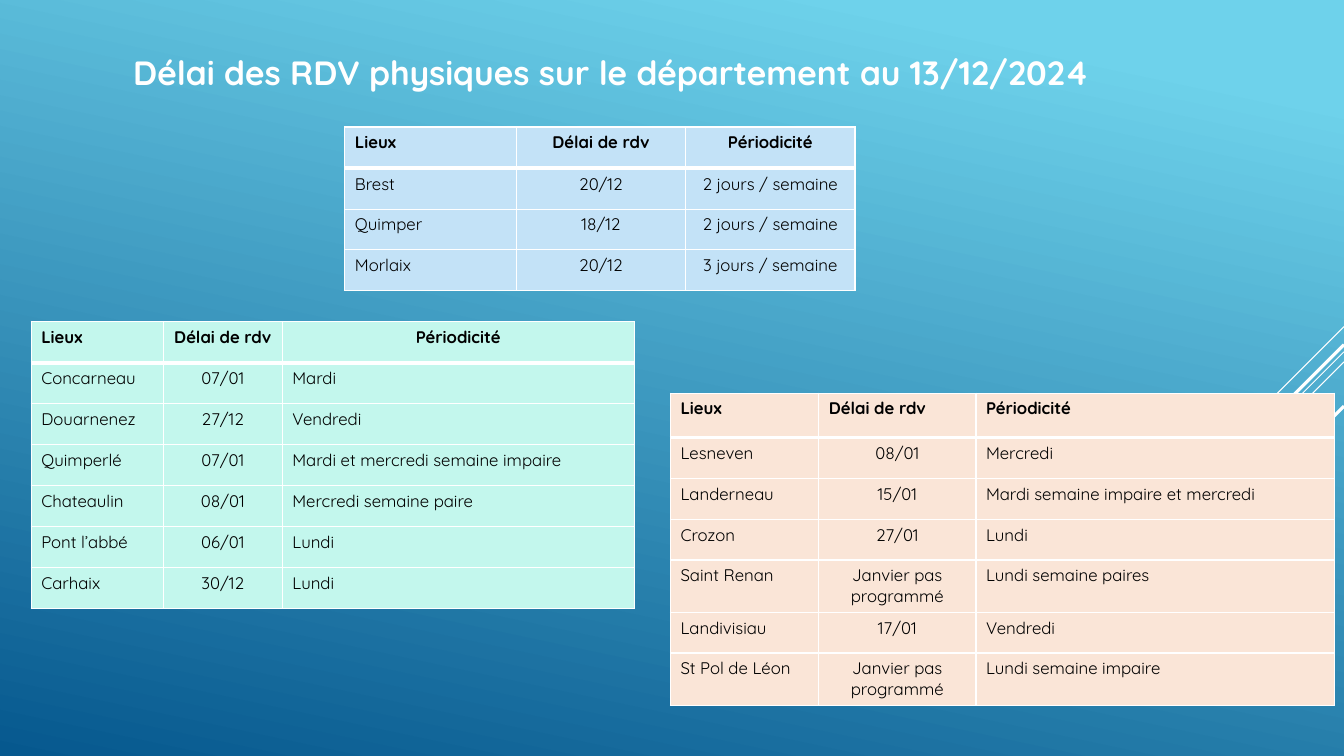
from dataclasses import dataclass

from lxml import etree
from pptx import Presentation
from pptx.dml.color import RGBColor
from pptx.enum.shapes import MSO_CONNECTOR
from pptx.enum.text import MSO_ANCHOR, PP_ALIGN
from pptx.oxml.ns import qn
from pptx.util import Inches, Pt

STRAIGHT = MSO_CONNECTOR.STRAIGHT
MIDDLE = MSO_ANCHOR.MIDDLE
LEFT, CENTER = PP_ALIGN.LEFT, PP_ALIGN.CENTER


@dataclass(frozen=True)
class Theme:
    font: str = "Quicksand"
    title_size: int = 24
    table_size: int = 12
    white: str = "FFFFFF"
    black: str = "000000"
    sky: str = "6ED2EB"
    ocean: str = "06588E"
    blue: str = "C3E2F7"
    mint: str = "C3F7ED"
    peach: str = "FAE5D7"


THEME = Theme()


def add_text(para, text, size, color, bold, align):
    para.alignment = align
    span = para.add_run()
    span.text = text
    span.font.name = THEME.font
    span.font.size = Pt(size)
    span.font.bold = bold
    span.font.color.rgb = RGBColor.from_string(color)


def set_borders(cell, top, bottom):
    properties = cell._tc.get_or_add_tcPr()
    widths = {"a:lnL": 1, "a:lnR": 1, "a:lnT": top, "a:lnB": bottom}
    for position, (side, width) in enumerate(widths.items()):
        border = etree.Element(qn(side), w=str(Pt(width)))
        fill = etree.SubElement(border, qn("a:solidFill"))
        etree.SubElement(fill, qn("a:srgbClr"), val=THEME.white)
        properties.insert(position, border)


# Page and background gradient
deck = Presentation()
deck.slide_width = Inches(13.33)
deck.slide_height = Inches(7.5)
page = deck.slides.add_slide(deck.slide_layouts[5])
background = page.background.fill
background.gradient()
background.gradient_angle = 360 - 102
stops = [(0.1, THEME.sky), (1, THEME.ocean)]
for stop, (position, color) in zip(background.gradient_stops, stops):
    stop.position = position
    stop.color.rgb = RGBColor.from_string(color)

# Diagonal lines from the right edge: top, reach at 45 degrees, weight
diagonals = [(3.24, 1, 0.75), (3.49, 3.26, 0.75), (3.59, 2.07, 0.75),
             (3.42, 1.91, 2.25), (4.03, 1.39, 2.25)]
for top, reach, weight in diagonals:
    diagonal = page.shapes.add_connector(
        STRAIGHT, deck.slide_width, Inches(top),
        deck.slide_width - Inches(reach), Inches(top + reach))
    diagonal.line.color.rgb = RGBColor.from_string(THEME.white)
    diagonal.line.width = Pt(weight)
    etree.SubElement(diagonal._element.spPr, qn("a:effectLst"))

# Title
title = page.shapes.title
title.left, title.top = Inches(1.22), Inches(0.46)
title.width, title.height = Inches(10.61), Inches(0.5)
title.text_frame.word_wrap = True
title.text_frame.vertical_anchor = MIDDLE
add_text(title.text_frame.paragraphs[0],
         "Délai des RDV physiques sur le département au 13/12/2024",
         THEME.title_size, THEME.white, True, LEFT)

# Table contents
header = ("Lieux", "Délai de rdv", "Périodicité")
main_towns = [
    ("Brest", "20/12", "2 jours / semaine"),
    ("Quimper", "18/12", "2 jours / semaine"),
    ("Morlaix", "20/12", "3 jours / semaine"),
]
south_towns = [
    ("Concarneau", "07/01", "Mardi"),
    ("Douarnenez", "27/12", "Vendredi"),
    ("Quimperlé", "07/01", "Mardi et mercredi semaine impaire"),
    ("Chateaulin", "08/01", "Mercredi semaine paire"),
    ("Pont l’abbé", "06/01", "Lundi"),
    ("Carhaix", "30/12", "Lundi"),
]
north_towns = [
    ("Lesneven", "08/01", "Mercredi"),
    ("Landerneau", "15/01", "Mardi semaine impaire et mercredi"),
    ("Crozon", "27/01", "Lundi"),
    ("Saint Renan", "Janvier pas programmé", "Lundi semaine paires"),
    ("Landivisiau", "17/01", "Vendredi"),
    ("St Pol de Léon", "Janvier pas programmé", "Lundi semaine impaire"),
]

# Tables: left, top, height, header height, columns, fill, alignments, towns
centered = (LEFT, CENTER, CENTER)
dates_centered = (LEFT, CENTER, LEFT)
all_left = (LEFT, LEFT, LEFT)
tables = [
    (3.42, 1.26, 1.62, 0.41, (1.7, 1.68, 1.68), THEME.blue,
     centered, centered, main_towns),
    (0.31, 3.19, 2.84, 0.41, (1.31, 1.18, 3.49), THEME.mint,
     centered, dates_centered, south_towns),
    (6.65, 3.9, 2.84, 0.44, (1.47, 1.56, 3.56), THEME.peach,
     all_left, dates_centered, north_towns),
]
for (left, top, height, header_height, widths, color,
     header_aligns, body_aligns, towns) in tables:
    rows = [header] + towns
    table = page.shapes.add_table(
        len(rows), len(header), Inches(left), Inches(top),
        Inches(sum(widths)), Inches(height)).table
    table.horz_banding = False
    table.rows[0].height = Inches(header_height)
    for column, width in zip(table.columns, widths):
        column.width = Inches(width)
    for row_index, row in enumerate(rows):
        is_header = row_index == 0
        aligns = header_aligns if is_header else body_aligns
        for column_index, (text, align) in enumerate(zip(row, aligns)):
            cell = table.cell(row_index, column_index)
            cell.fill.solid()
            cell.fill.fore_color.rgb = RGBColor.from_string(color)
            set_borders(cell, top=3 if row_index == 1 else 1,
                        bottom=3 if is_header else 1)
            add_text(cell.text_frame.paragraphs[0], text,
                     THEME.table_size, THEME.black, is_header, align)

deck.save("out.pptx")
